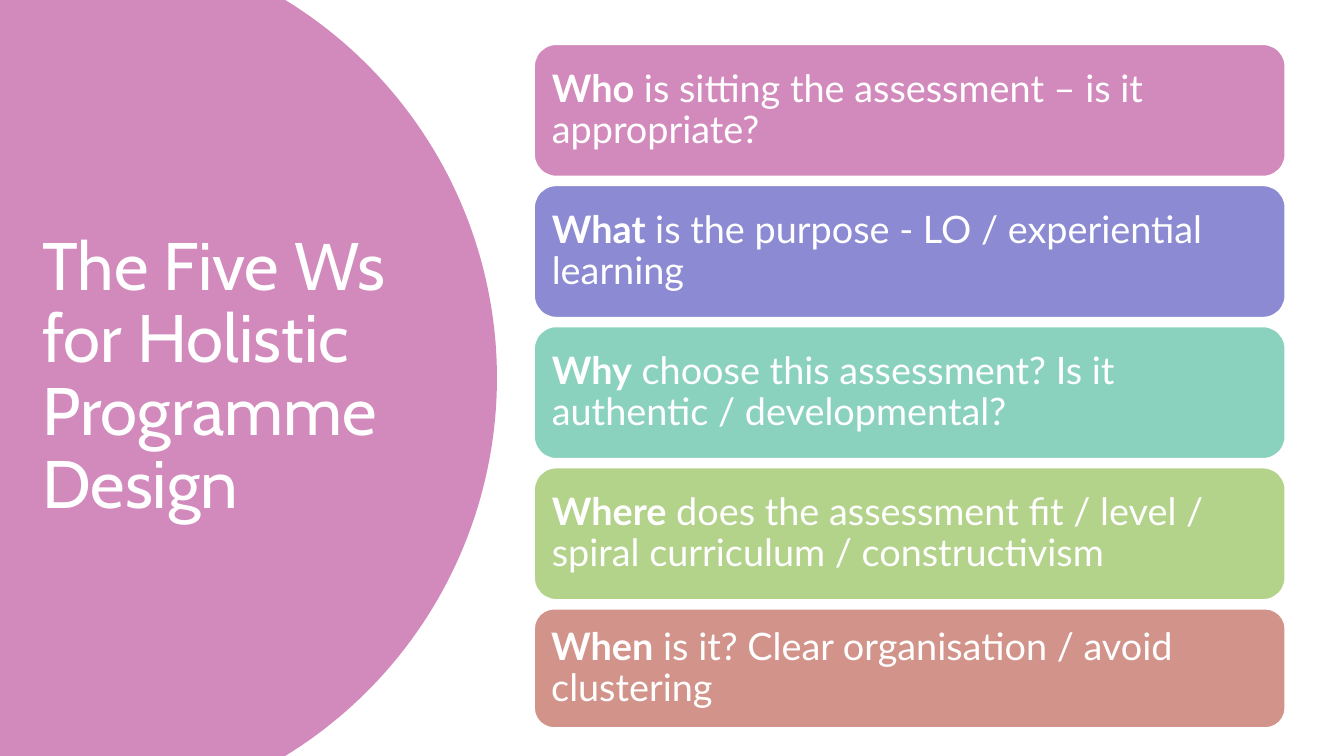
import math

from pptx import Presentation
from pptx.dml.color import RGBColor
from pptx.enum.shapes import MSO_SHAPE
from pptx.enum.text import MSO_ANCHOR, MSO_AUTO_SIZE, PP_ALIGN
from pptx.util import Pt

ROUND = MSO_SHAPE.ROUNDED_RECTANGLE
MIDDLE = MSO_ANCHOR.MIDDLE
LEFT = PP_ALIGN.LEFT
FIXED = MSO_AUTO_SIZE.NONE

COLORS = {
    "white": "FFFFFF",
    "pink": "D28ABC",
    "blue": "8B8AD2",
    "teal": "8AD2BE",
    "green": "B3D28A",
    "coral": "D2948A",
}


def rgb(name):
    return RGBColor.from_string(COLORS[name])


def write(shape, runs, font, size, after=0, inset=7.2):
    """Fill a shape with one paragraph of (text, bold) runs."""
    frame = shape.text_frame
    frame.word_wrap = True
    frame.auto_size = FIXED
    frame.vertical_anchor = MIDDLE
    frame.margin_left = frame.margin_right = Pt(inset)
    frame.margin_top = frame.margin_bottom = Pt(inset)
    para = frame.paragraphs[0]
    para.alignment = LEFT
    para.line_spacing = 0.9
    para.space_after = Pt(after)
    for text, bold in runs:
        run = para.add_run()
        run.text = text
        run.font.name = font
        run.font.size = Pt(size)
        run.font.bold = bold
        run.font.color.rgb = rgb("white")


WIDTH, HEIGHT = 960, 540
deck = Presentation()
deck.slide_width, deck.slide_height = Pt(WIDTH), Pt(HEIGHT)
slide = deck.slides.add_slide(deck.slide_layouts[5])
shapes = slide.shapes

# Left panel, bounded by an arc of a large circle
RADIUS, EDGE, STEPS = 316.6, 355, 90
sweep = math.asin(HEIGHT / 2 / RADIUS)
arc = []
for step in range(STEPS + 1):
    turn = sweep * (2 * step / STEPS - 1)
    arc.append((Pt(EDGE - RADIUS + RADIUS * math.cos(turn)),
                Pt(HEIGHT / 2 + RADIUS * math.sin(turn))))
outline = shapes.build_freeform(0, 0)
outline.add_line_segments(arc + [(0, Pt(HEIGHT))], close=True)
panel = outline.convert_to_shape()
panel.shadow.inherit = False
panel.fill.solid()
panel.fill.fore_color.rgb = rgb("pink")
panel.line.fill.background()

# Title, in front of the panel
title = shapes.title
title.element.addprevious(panel.element)
title.left, title.top = Pt(23), Pt(50.4)
title.width, title.height = Pt(265), Pt(438.5)
write(title, [("The Five Ws for Holistic Programme Design", False)],
      font="Cabin", size=48)

# Five question cards
CARDS = [
    ("Who", " is sitting the assessment – is it appropriate?", "pink", 94.3),
    ("What", " is the purpose - LO / experiential learning", "blue", 94.3),
    ("Why", " choose this assessment? Is it authentic / developmental?",
     "teal", 94.3),
    ("Where", " does the assessment fit / level / spiral curriculum"
     " / constructivism", "green", 94.3),
    ("When", " is it? Clear organisation / avoid clustering", "coral", 85),
]
TOP, PITCH = 31.7, 100.8
for row, (word, rest, color, tall) in enumerate(CARDS):
    card = shapes.add_shape(ROUND, Pt(381.6), Pt(TOP + row * PITCH),
                            Pt(536.4), Pt(tall))
    card.shadow.inherit = False
    card.fill.solid()
    card.fill.fore_color.rgb = rgb(color)
    card.line.color.rgb = rgb("white")
    card.line.width = Pt(1)
    write(card, [(word, True), (rest, False)],
          font="Lato", size=27, after=9.45, inset=8)

deck.save("out.pptx")
